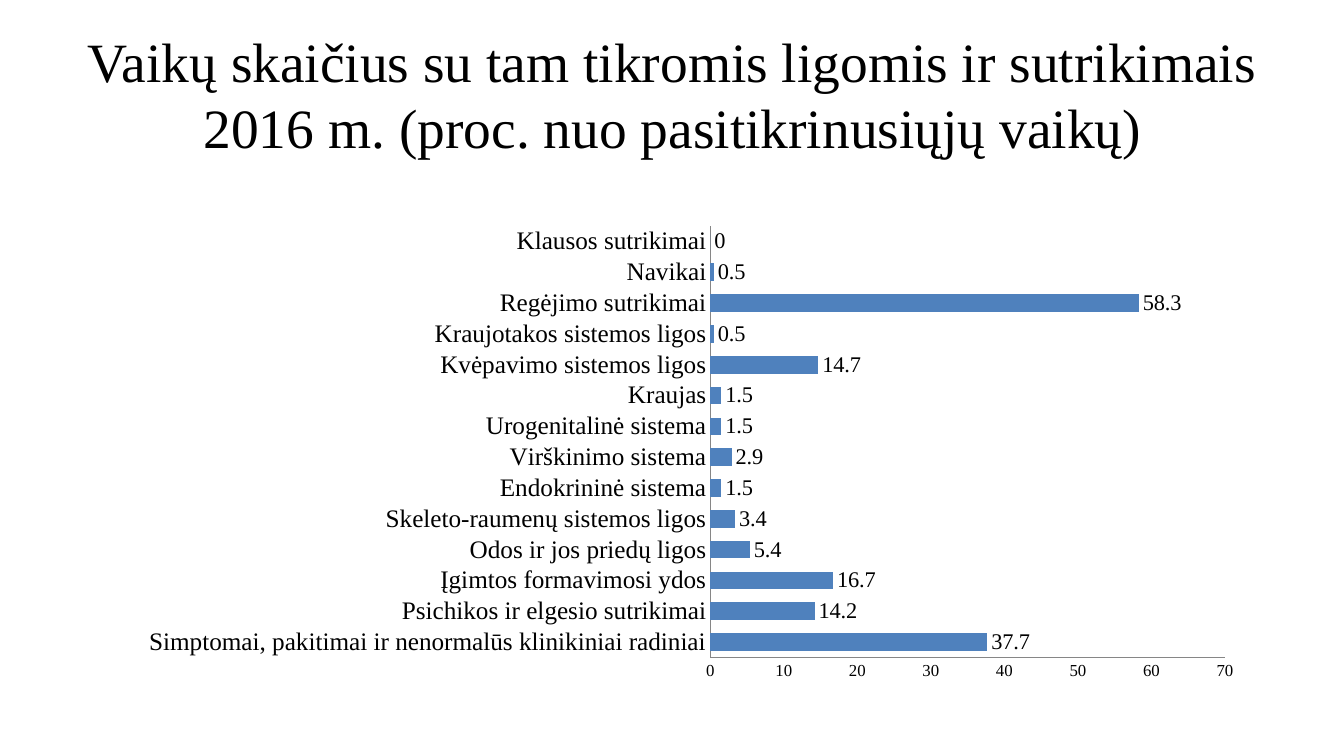
import dataclasses

import lxml.etree
import pptx
import pptx.chart.chart
import pptx.chart.data
import pptx.dml.color
import pptx.enum.chart
import pptx.enum.text
import pptx.oxml.ns
import pptx.slide
import pptx.util


@dataclasses.dataclass(frozen=True)
class Theme:
    font: str = "Times New Roman"
    text: pptx.dml.color.RGBColor = pptx.dml.color.RGBColor(0, 0, 0)
    bar: pptx.dml.color.RGBColor = pptx.dml.color.RGBColor(0x4F, 0x81, 0xBD)
    axis: pptx.dml.color.RGBColor = pptx.dml.color.RGBColor(0x86, 0x86, 0x86)
    title_size: float = 39.6
    category_size: float = 18
    label_size: float = 16
    value_size: float = 12


@dataclasses.dataclass(frozen=True)
class Box:
    left: float
    top: float
    width: float
    height: float

    def lengths(self) -> list[pptx.util.Length]:
        return [pptx.util.Inches(value) for value in dataclasses.astuple(self)]


@dataclasses.dataclass(frozen=True)
class Condition:
    name: str
    percent: float


THEME = Theme()
TITLE = "Vaikų skaičius su tam tikromis ligomis ir sutrikimais 2016 m. (proc. nuo pasitikrinusiųjų vaikų)"
TITLE_BOX = Box(0.67, 0.3, 12, 1.25)
CHART_BOX = Box(0.32, 2.08, 12.01, 5.42)
PLOT_LAYOUT = {"x": 0.56, "y": 0.03, "w": 0.425, "h": 0.79}

# Listed from the bottom bar to the top bar
CONDITIONS = [
    Condition("Simptomai, pakitimai ir nenormalūs klinikiniai radiniai", 37.7),
    Condition("Psichikos ir elgesio sutrikimai", 14.2),
    Condition("Įgimtos formavimosi ydos", 16.7),
    Condition("Odos ir jos priedų ligos", 5.4),
    Condition("Skeleto-raumenų sistemos ligos", 3.4),
    Condition("Endokrininė sistema", 1.5),
    Condition("Virškinimo sistema", 2.9),
    Condition("Urogenitalinė sistema", 1.5),
    Condition("Kraujas", 1.5),
    Condition("Kvėpavimo sistemos ligos", 14.7),
    Condition("Kraujotakos sistemos ligos", 0.5),
    Condition("Regėjimo sutrikimai", 58.3),
    Condition("Navikai", 0.5),
    Condition("Klausos sutrikimai", 0),
]


def style_font(font, size: float) -> None:
    font.name = THEME.font
    font.size = pptx.util.Pt(size)
    font.color.rgb = THEME.text


def add_title(slide: pptx.slide.Slide) -> None:
    text_frame = slide.shapes.add_textbox(*TITLE_BOX.lengths()).text_frame
    text_frame.word_wrap = True
    text_frame.vertical_anchor = pptx.enum.text.MSO_ANCHOR.MIDDLE
    text_frame.text = TITLE
    paragraph = text_frame.paragraphs[0]
    paragraph.alignment = pptx.enum.text.PP_ALIGN.CENTER
    style_font(paragraph.runs[0].font, THEME.title_size)


def place_plot(chart: pptx.chart.chart.Chart) -> None:
    qualified = pptx.oxml.ns.qn
    plot_area = chart.plots[0]._element.getparent()
    for old_layout in plot_area.findall(qualified("c:layout")):
        plot_area.remove(old_layout)
    layout = lxml.etree.Element(qualified("c:layout"))
    manual = lxml.etree.SubElement(layout, qualified("c:manualLayout"))
    settings = {"layoutTarget": "inner", "xMode": "edge", "yMode": "edge", **PLOT_LAYOUT}
    for name, value in settings.items():
        lxml.etree.SubElement(manual, qualified(f"c:{name}"), val=str(value))
    plot_area.insert(0, layout)


def style_axis(axis, size: float) -> None:
    axis.has_major_gridlines = False
    axis.major_tick_mark = pptx.enum.chart.XL_TICK_MARK.NONE
    axis.minor_tick_mark = pptx.enum.chart.XL_TICK_MARK.NONE
    axis.format.line.color.rgb = THEME.axis
    axis.format.line.width = pptx.util.Pt(0.75)
    style_font(axis.tick_labels.font, size)


def add_condition_chart(slide: pptx.slide.Slide) -> None:
    data = pptx.chart.data.CategoryChartData()
    data.categories = [condition.name for condition in CONDITIONS]
    data.add_series("Series 1", [condition.percent for condition in CONDITIONS])
    chart = slide.shapes.add_chart(
        pptx.enum.chart.XL_CHART_TYPE.BAR_CLUSTERED, *CHART_BOX.lengths(), data
    ).chart
    chart.has_legend = False
    chart.has_title = False
    style_font(chart.font, THEME.category_size)
    place_plot(chart)

    # Axes
    style_axis(chart.category_axis, THEME.category_size)
    style_axis(chart.value_axis, THEME.value_size)
    chart.value_axis.minimum_scale = 0
    chart.value_axis.maximum_scale = 70
    chart.value_axis.major_unit = 10

    # Bars and their values
    plot = chart.plots[0]
    plot.gap_width = 75
    plot.vary_by_categories = False
    fill = plot.series[0].format.fill
    fill.solid()
    fill.fore_color.rgb = THEME.bar
    plot.has_data_labels = True
    labels = plot.data_labels
    labels.show_value = True
    labels.position = pptx.enum.chart.XL_LABEL_POSITION.OUTSIDE_END
    style_font(labels.font, THEME.label_size)


def main() -> None:
    presentation = pptx.Presentation()
    presentation.slide_width = pptx.util.Inches(13.33)
    presentation.slide_height = pptx.util.Inches(7.5)
    slide = presentation.slides.add_slide(presentation.slide_layouts[6])
    add_title(slide)
    add_condition_chart(slide)
    presentation.save("out.pptx")


if __name__ == "__main__":
    main()
